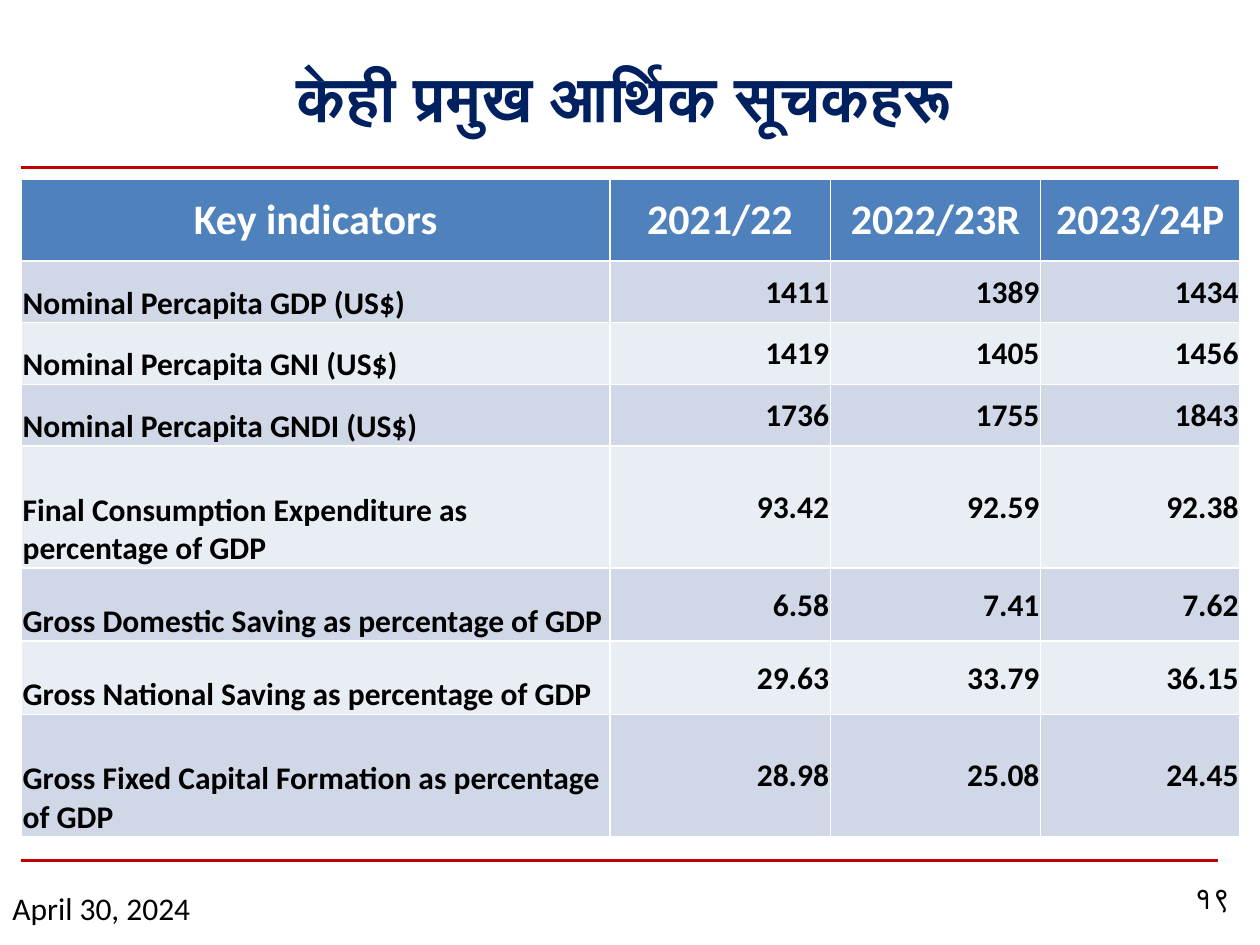
from pptx import Presentation
from pptx.util import Inches, Pt
from pptx.dml.color import RGBColor
from pptx.enum.shapes import MSO_CONNECTOR
from pptx.enum.text import PP_ALIGN, MSO_ANCHOR
from pptx.oxml.ns import qn
from lxml.etree import SubElement

HUES = {"navy": "002060", "red": "C00000", "head": "4F81BD", "dark": "D0D8E8",
        "light": "E9EDF4", "white": "FFFFFF", "black": "000000"}


def color(name):
    return RGBColor.from_string(HUES[name])


def write(frame, text, size, hue, bold=False, align=PP_ALIGN.LEFT, face="Calibri"):
    para = frame.paragraphs[0]
    para.alignment = align
    run = para.add_run()
    run.text = text
    run.font.name = face
    run.font.size = Pt(size)
    run.font.bold = bold
    run.font.color.rgb = color(hue)


deck = Presentation()
deck.slide_width, deck.slide_height = Inches(10), Inches(7.5)
slide = deck.slides.add_slide(deck.slide_layouts[5])
shapes = slide.shapes

for y in (1.33, 6.83):
    rule = shapes.add_connector(MSO_CONNECTOR.STRAIGHT, Inches(0.17), Inches(y),
                                Inches(9.67), Inches(y))
    rule.line.color.rgb = color("red")
    rule.line.width = Pt(1.5)
    SubElement(rule.element.spPr, qn("a:effectLst"))

title = shapes.title
title.left, title.top = Inches(0.08), Inches(0.25)
title.width, title.height = Inches(9.75), Inches(1.03)
title.text_frame.vertical_anchor = MSO_ANCHOR.MIDDLE
write(title.text_frame, "केही प्रमुख आर्थिक सूचकहरू", 36, "navy", True, PP_ALIGN.CENTER)

rows = [
    ("Key indicators", "2021/22", "2022/23R", "2023/24P"),
    ("Nominal Percapita GDP (US$)", "1411", "1389", "1434"),
    ("Nominal Percapita GNI (US$)", "1419", "1405", "1456"),
    ("Nominal Percapita GNDI (US$)", "1736", "1755", "1843"),
    ("Final Consumption Expenditure as percentage of GDP", "93.42", "92.59", "92.38"),
    ("Gross Domestic Saving as percentage of GDP", "6.58", "7.41", "7.62"),
    ("Gross National Saving as percentage of GDP", "29.63", "33.79", "36.15"),
    ("Gross Fixed Capital Formation as percentage of GDP", "28.98", "25.08", "24.45"),
]
widths = (4.67, 1.75, 1.67, 1.58)
heights = (0.65, 0.49, 0.49, 0.49, 0.97, 0.58, 0.58, 0.97)
table = shapes.add_table(len(rows), len(widths), Inches(0.17), Inches(1.42),
                         Inches(9.67), Inches(5.25)).table
for col, width in zip(table.columns, widths):
    col.width = Inches(width)
for row, height in zip(table.rows, heights):
    row.height = Inches(height)

for r, row in enumerate(rows):
    for c, text in enumerate(row):
        cell = table.cell(r, c)
        cell.margin_left = cell.margin_right = cell.margin_top = Inches(0.01)
        cell.margin_bottom = 0
        cell.vertical_anchor = MSO_ANCHOR.BOTTOM if r and c == 0 else MSO_ANCHOR.MIDDLE
        cell.fill.solid()
        if r == 0:
            cell.fill.fore_color.rgb = color("head")
            write(cell.text_frame, text, 24, "white", True, PP_ALIGN.CENTER)
        else:
            cell.fill.fore_color.rgb = color("dark" if r % 2 else "light")
            align = PP_ALIGN.RIGHT if c else PP_ALIGN.LEFT
            write(cell.text_frame, text, 18, "black", True, align)

notes = [
    (0, 7.01, 2.17, 0.41, "April 30, 2024", PP_ALIGN.LEFT, "Calibri"),
    (9.33, 6.92, 0.58, 0.48, "१९", PP_ALIGN.CENTER, "Roboto"),
]
for x, y, w, h, text, align, face in notes:
    box = shapes.add_textbox(Inches(x), Inches(y), Inches(w), Inches(h))
    box.text_frame.word_wrap = True
    write(box.text_frame, text, 18, "black", align=align, face=face)

deck.save("out.pptx")
